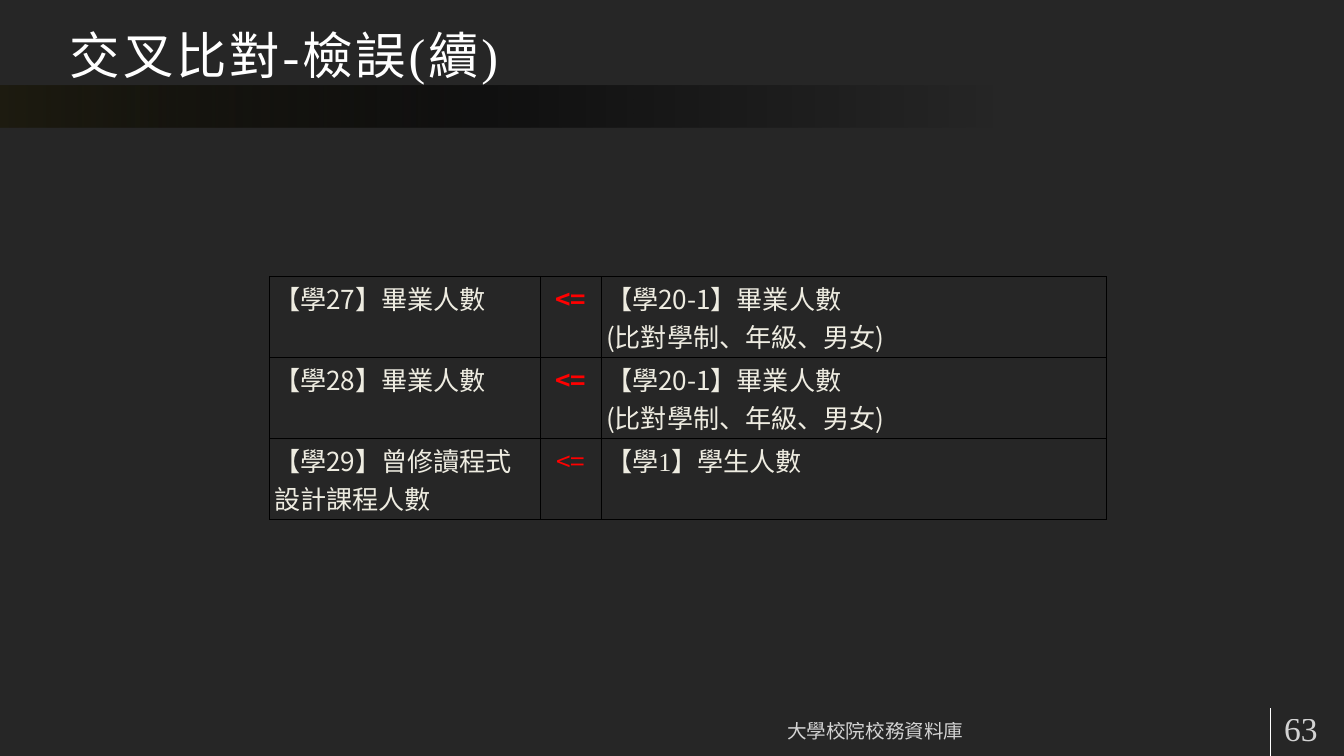
from lxml import etree
from pptx import Presentation
from pptx import util as u
from pptx.dml.color import RGBColor
from pptx.enum import shapes, text
from pptx.oxml import ns

WIDTH, HEIGHT = 20, 11.25
COLORS = {"background": "262626", "text": "FFFFFF", "cell": "EEECE1",
          "operator": "FF0000", "olive": "1E1C11", "black": "000000"}
LATIN, CJK = "Times New Roman", "Noto Sans CJK SC"

TITLE = "交叉比對-檢誤(續)"
FOOTER = "大學校院校務資料庫"
PAGE = "63"
CHECKS = [
    ("【學27】畢業人數", "<=", "【學20-1】畢業人數\n(比對學制、年級、男女)"),
    ("【學28】畢業人數", "<=", "【學20-1】畢業人數\n(比對學制、年級、男女)"),
    ("【學29】曾修讀程式設計課程人數", "<=", "【學1】學生人數"),
]
COLUMNS = (4.03, 0.91, 7.51)
ROWS = (0.88, 0.88, 0.97)
BAND_STOPS = [(0, "olive", 100), (39, "black", 54), (74, "black", 0)]

LEFT, CENTER = text.PP_ALIGN.LEFT, text.PP_ALIGN.CENTER
BOTTOM, MIDDLE = text.MSO_ANCHOR.BOTTOM, text.MSO_ANCHOR.MIDDLE


def inches(*values):
    return [u.Inches(value) for value in values]


def rgb(name):
    return RGBColor.from_string(COLORS[name])


def add_xml(parent, tag, **attributes):
    return etree.SubElement(parent, ns.qn(tag), attributes)


def style_paragraph(paragraph, size, color, font=LATIN, bold=False,
                    align=LEFT, opacity=100, spacing=0):
    paragraph.alignment = align
    paragraph.font.size = u.Pt(size)
    paragraph.font.name = font
    paragraph.font.bold = bold
    paragraph.font.color.rgb = rgb(color)
    properties = paragraph._p.pPr.find(ns.qn("a:defRPr"))
    add_xml(properties, "a:ea", typeface=CJK)
    if spacing:
        properties.set("spc", str(spacing * 100))
    if opacity < 100:
        add_xml(properties.find(".//" + ns.qn("a:srgbClr")), "a:alpha", val=str(opacity * 1000))


def fill_text(shape, content, anchor, **style):
    frame = shape.text_frame
    frame.word_wrap = True
    frame.auto_size = text.MSO_AUTO_SIZE.NONE
    frame.vertical_anchor = anchor
    frame.margin_left = frame.margin_right = u.Inches(0.18)
    frame.margin_top = frame.margin_bottom = u.Inches(0.09)
    frame.text = content
    style_paragraph(frame.paragraphs[0], color="text", **style)


def add_band(slide):
    band = slide.shapes.add_shape(shapes.MSO_SHAPE.RECTANGLE, *inches(0, 1.27, WIDTH, 0.63))
    band.shadow.inherit = False
    band.line.fill.background()
    band.fill.gradient()
    band.fill.gradient_angle = 0
    stops = band._element.spPr.find(".//" + ns.qn("a:gsLst"))
    for stop in list(stops):
        stops.remove(stop)
    for position, color, opacity in BAND_STOPS:
        stop = add_xml(stops, "a:gs", pos=str(position * 1000))
        value = add_xml(stop, "a:srgbClr", val=COLORS[color])
        add_xml(value, "a:alpha", val=str(opacity * 1000))


def add_divider(slide):
    divider = slide.shapes.add_connector(
        shapes.MSO_CONNECTOR.STRAIGHT, *inches(18.9, 10.54, 18.9, HEIGHT))
    divider.line.color.rgb = rgb("text")
    divider.line.width = u.Pt(0.75)
    add_xml(divider._element.spPr, "a:effectLst")


def style_cell(cell):
    cell.margin_left = cell.margin_right = u.Inches(0.07)
    cell.margin_top = cell.margin_bottom = u.Inches(0.04)
    properties = cell._tc.get_or_add_tcPr()
    for side in ("a:lnL", "a:lnR", "a:lnT", "a:lnB"):
        border = add_xml(properties, side, w=str(u.Pt(1)))
        add_xml(add_xml(border, "a:solidFill"), "a:srgbClr", val=COLORS["black"])
    cell.fill.background()


def add_checks(slide):
    frame = slide.shapes.add_table(
        len(ROWS), len(COLUMNS), *inches(4.01, 4.12, sum(COLUMNS), sum(ROWS)))
    table = frame.table
    table.first_row = table.horz_banding = False
    for column, width in zip(table.columns, COLUMNS):
        column.width = u.Inches(width)
    for row, height in zip(table.rows, ROWS):
        row.height = u.Inches(height)
    last = len(CHECKS) - 1
    for i, check in enumerate(CHECKS):
        for j, content in enumerate(check):
            cell = table.cell(i, j)
            style_cell(cell)
            cell.text_frame.text = content
            operator = j == 1
            for paragraph in cell.text_frame.paragraphs:
                style_paragraph(
                    paragraph, 28, "operator" if operator else "cell",
                    font=LATIN if (i, j) == (last, 2) else CJK,
                    bold=operator and i < last,
                    align=CENTER if operator else LEFT)


def main():
    presentation = Presentation()
    presentation.slide_width, presentation.slide_height = inches(WIDTH, HEIGHT)
    slide = presentation.slides.add_slide(presentation.slide_layouts[5])
    slide.background.fill.solid()
    slide.background.fill.fore_color.rgb = rgb("background")

    add_band(slide)
    add_divider(slide)
    title = slide.shapes.title
    title.left, title.top, title.width, title.height = inches(0.86, 0, 18, 1.35)
    fill_text(title, TITLE, BOTTOM, size=54, spacing=3)
    footer = slide.shapes.add_textbox(*inches(7.16, 10.54, 11.73, 0.6))
    fill_text(footer, FOOTER, BOTTOM, size=21, align=CENTER, opacity=80)
    page = slide.shapes.add_textbox(*inches(18.93, 10.54, 1.15, 0.6))
    fill_text(page, PAGE, MIDDLE, size=36, opacity=80)
    add_checks(slide)
    presentation.save("out.pptx")


if __name__ == "__main__":
    main()
